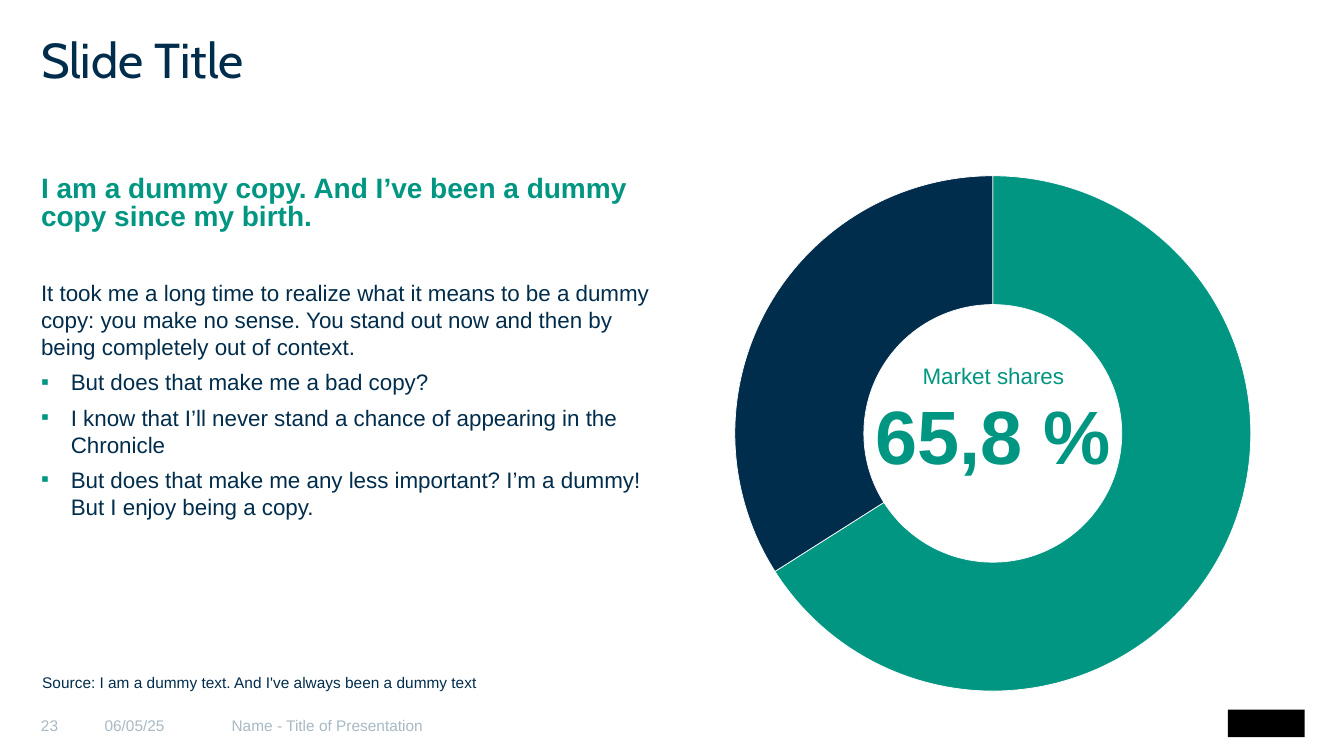
from dataclasses import dataclass

from lxml.etree import SubElement
from pptx import Presentation
from pptx.chart.data import CategoryChartData as ChartData
from pptx.dml.color import RGBColor as RGB
from pptx.enum.chart import XL_CHART_TYPE as Kind
from pptx.enum.shapes import MSO_SHAPE as Form
from pptx.enum.text import MSO_ANCHOR as Anchor, PP_ALIGN as Align
from pptx.oxml import parse_xml
from pptx.oxml.ns import nsdecls, qn
from pptx.slide import Slide
from pptx.text.text import Font
from pptx.util import Pt


@dataclass(frozen=True)
class Theme:
    navy: RGB = RGB(0x00, 0x2D, 0x4C)
    green: RGB = RGB(0x00, 0x96, 0x82)
    grey: RGB = RGB(0xA8, 0xB9, 0xC4)
    white: RGB = RGB(0xFF, 0xFF, 0xFF)
    black: RGB = RGB(0, 0, 0)
    head: str = "Cabin"
    body: str = "Arial"
    title: float = 35
    lead: float = 20
    text: float = 16
    small: float = 11
    label: float = 10
    huge: float = 54


THEME = Theme()


@dataclass(frozen=True)
class Box:
    left: float
    top: float
    width: float
    height: float

    def points(self) -> tuple[Pt, Pt, Pt, Pt]:
        return Pt(self.left), Pt(self.top), Pt(self.width), Pt(self.height)


@dataclass(frozen=True)
class Para:
    text: str
    size: float = THEME.text
    color: RGB = THEME.navy
    face: str = THEME.body
    bold: bool = False
    line: float = 1.0
    before: float = 0
    after: float = 0
    align: Align = Align.LEFT
    bullet: bool = False


@dataclass(frozen=True)
class Block:
    box: Box
    paras: tuple[Para, ...]
    anchor: Anchor = Anchor.TOP
    inset: float = 0


LEFT, TOP, WIDTH, HEIGHT = 29.3, 125.3, 442, 368.6
FOOT, BAND = 493.9, 46.1
RIGHT = 488.2
INDENT = 21.3

COPY = (
    Para("I am a dummy copy. And I’ve been a dummy copy since my birth.",
         THEME.lead, THEME.green, bold=True, line=0.85, after=30.5),
    Para("It took me a long time to realize what it means to be a dummy copy: "
         "you make no sense. You stand out now and then by being completely "
         "out of context.", before=3, after=3),
    *(Para(text, before=3, after=3, bullet=True) for text in (
        "But does that make me a bad copy?",
        "I know that I’ll never stand a chance of appearing in the Chronicle",
        "But does that make me any less important? I’m a dummy! "
        "But I enjoy being a copy.",
    )),
)
SHARE = (
    Para("Market shares", color=THEME.green, before=3, align=Align.CENTER),
    Para("65,8 %", THEME.huge, THEME.green, bold=True, after=3,
         align=Align.CENTER),
)
SOURCE = Para("Source: I am a dummy text. And I've always been a dummy text",
              THEME.small, line=1.1, before=3, after=3)


def foot(left: float, width: float, text: str) -> Block:
    return Block(Box(left, FOOT, width, BAND),
                 (Para(text, THEME.small, THEME.grey),), Anchor.MIDDLE, 2.9)


BLOCKS = (
    Block(Box(LEFT, 29.5, 901.4, 79.2),
          (Para("Slide Title", THEME.title, face=THEME.head, line=0.8),)),
    Block(Box(LEFT, TOP, WIDTH, HEIGHT), COPY),
    foot(LEFT, 45.4, "23"),
    foot(74.7, 90.7, "06/05/25"),
    foot(165.4, 459.4, "Name - Title of Presentation"),
    Block(Box(576.4, 242.6, 266.4, 115.9), SHARE, Anchor.MIDDLE),
    Block(Box(30.2, 462.2, 441.4, 31.7), (SOURCE,), Anchor.BOTTOM),
)


def style(font: Font, face: str, size: float, color: RGB) -> None:
    font.name, font.size = face, Pt(size)
    font.color.rgb = color


def add_block(slide: Slide, block: Block) -> None:
    frame = slide.shapes.add_textbox(*block.box.points()).text_frame
    frame.word_wrap = True
    frame.vertical_anchor = block.anchor
    frame.margin_left = frame.margin_right = frame.margin_bottom = 0
    frame.margin_top = Pt(block.inset)
    for i, item in enumerate(block.paras):
        para = frame.add_paragraph() if i else frame.paragraphs[0]
        para.text = item.text
        para.alignment = item.align
        para.line_spacing = item.line
        para.space_before, para.space_after = Pt(item.before), Pt(item.after)
        style(para.font, item.face, item.size, item.color)
        para.font.bold = item.bold
        if item.bullet:
            props = para._p.get_or_add_pPr()
            props.set("marL", str(Pt(INDENT)))
            props.set("indent", str(-Pt(INDENT)))
            marks = (f'<a:buClr {nsdecls("a")}>'
                     f'<a:srgbClr val="{THEME.green}"/></a:buClr>',
                     f'<a:buFont {nsdecls("a")} typeface="{THEME.body}"/>',
                     f'<a:buChar {nsdecls("a")} char="▪"/>')
            for xml in marks:
                props.insert_element_before(parse_xml(xml), "a:defRPr")


def add_ring(slide: Slide) -> None:
    data = ChartData()
    data.categories = ["1", "2"]
    data.add_series("Series 1", (66, 34))
    box = Box(RIGHT, TOP, WIDTH, HEIGHT)
    chart = slide.shapes.add_chart(Kind.DOUGHNUT, *box.points(), data).chart
    chart.has_legend = chart.has_title = False
    style(chart.font, THEME.body, THEME.label, THEME.navy)
    plot = chart.plots[0]
    plot.vary_by_categories = True
    for i, color in enumerate((THEME.green, THEME.navy)):
        form = plot.series[0].points[i].format
        form.fill.solid()
        form.fill.fore_color.rgb = color
        form.line.color.rgb = THEME.white
        form.line.width = Pt(0.5)
    root = chart._chartSpace
    root.find(".//" + qn("c:holeSize")).set("val", "72")
    area = root.find(".//" + qn("c:plotArea"))
    for old in area.findall(qn("c:layout")):
        area.remove(old)
    layout = area.makeelement(qn("c:layout"))
    area.insert(0, layout)
    manual = SubElement(layout, qn("c:manualLayout"))
    for name, val in (("layoutTarget", "inner"), ("xMode", "edge"),
                      ("yMode", "edge"), ("x", "0.08"), ("y", "0"),
                      ("w", "0.84"), ("h", "1")):
        SubElement(manual, qn(f"c:{name}")).set("val", val)


def add_badge(slide: Slide) -> None:
    """Put a plain block where the sender's emblem belongs."""
    box = Box(877, 506.9, 55, 19.6)
    badge = slide.shapes.add_shape(Form.RECTANGLE, *box.points())
    badge.shadow.inherit = False
    badge.fill.solid()
    badge.fill.fore_color.rgb = THEME.black
    badge.line.fill.background()


def main() -> None:
    deck = Presentation()
    deck.slide_width, deck.slide_height = Pt(960), Pt(540)
    slide = deck.slides.add_slide(deck.slide_layouts[6])
    add_badge(slide)
    add_ring(slide)
    for block in BLOCKS:
        add_block(slide, block)
    deck.save("out.pptx")


if __name__ == "__main__":
    main()
